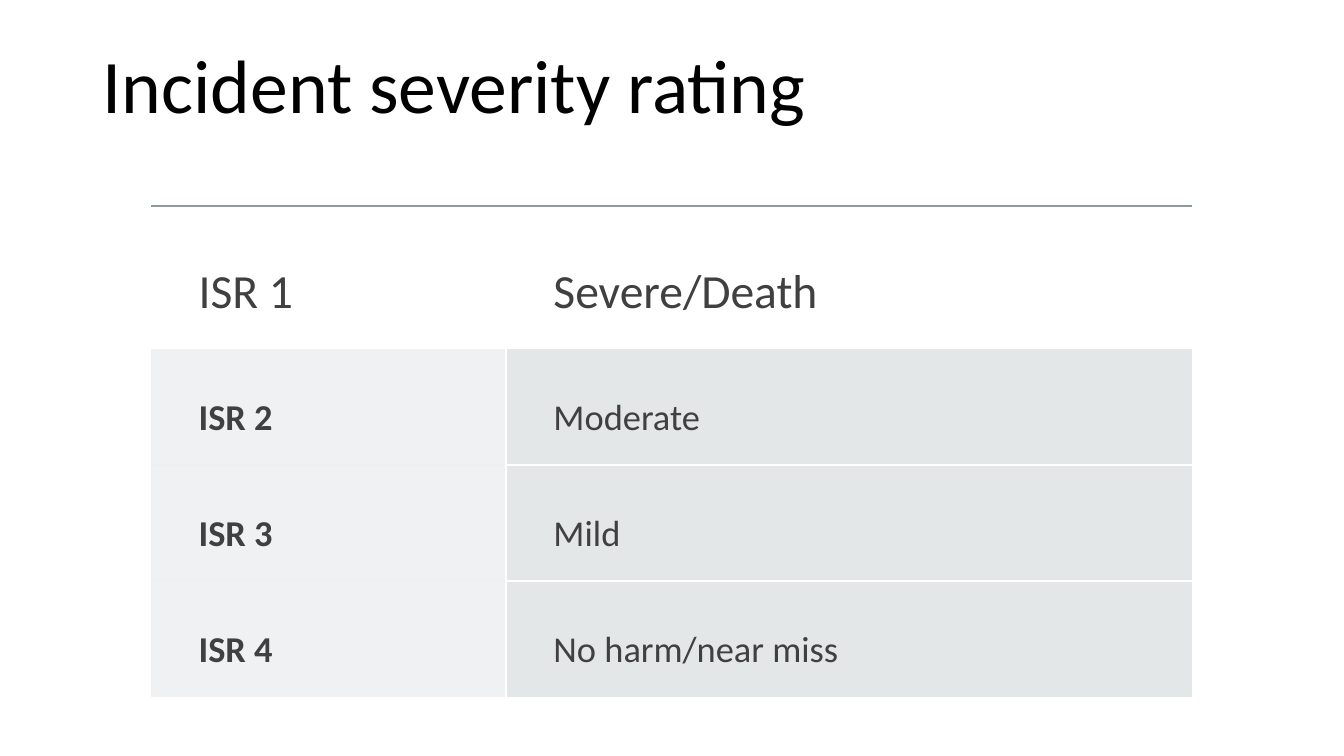
from lxml import etree
from pptx import Presentation
from pptx.dml.color import RGBColor
from pptx.enum.text import MSO_ANCHOR, PP_ALIGN
from pptx.oxml.ns import qn
from pptx.util import Inches, Pt

TOP, BOTTOM = MSO_ANCHOR.TOP, MSO_ANCHOR.BOTTOM
LEFT = PP_ALIGN.LEFT
TITLE_ONLY = 5

TITLE = "Incident severity rating"
RATINGS = [
    ("ISR 1", "Severe/Death"),
    ("ISR 2", "Moderate"),
    ("ISR 3", "Mild"),
    ("ISR 4", "No harm/near miss"),
]
COLUMN_WIDTHS = (3.52, 6.81)
ROW_HEIGHTS = (1.4, 1.15, 1.15, 1.15)
COLUMN_OPACITY = (20, 35)
CELL_FILL = "B4BCBE"
WHITE_LINE = ("FFFFFF", 100)
TOP_RULE = ("8F9A9D", 60)


def color(value):
    return RGBColor.from_string(value)


def set_format(target, values):
    for name, value in values.items():
        setattr(target, name, value)


def write_text(frame, text, line_spacing, size, ink, bold=False):
    para = frame.paragraphs[0]
    set_format(para, {"line_spacing": line_spacing, "alignment": LEFT})
    span = para.add_run()
    span.text = text
    set_format(span.font, {"name": "Calibri", "size": Pt(size), "bold": bold})
    span.font.color.rgb = color(ink)


def add_alpha(color_element, percent):
    etree.SubElement(color_element, qn("a:alpha"), val=str(percent * 1000))


def set_borders(cell, borders):
    """Draw the given sides and switch the others off, ahead of the cell fill."""
    properties = cell._tc.get_or_add_tcPr()
    for index, side in enumerate("LRTB"):
        line = etree.Element(qn(f"a:ln{side}"), w=str(Pt(1.5)))
        properties.insert(index, line)
        if side not in borders:
            etree.SubElement(line, qn("a:noFill"))
            continue
        value, opacity = borders[side]
        solid = etree.SubElement(line, qn("a:solidFill"))
        add_alpha(etree.SubElement(solid, qn("a:srgbClr"), val=value), opacity)


def borders_of(row, column):
    borders = {"R": WHITE_LINE}
    if row == 0:
        borders["T"] = TOP_RULE
    elif column == 1:
        borders["L"] = WHITE_LINE
        if row > 1:
            borders["T"] = WHITE_LINE
        if row < len(RATINGS) - 1:
            borders["B"] = WHITE_LINE
    return borders


def format_cell(cell, row, column, text):
    first = row == 0
    margin = Inches(0.28 if first else 0.24)
    set_format(cell, {
        "margin_left": Inches(0.47), "margin_top": margin,
        "margin_right": margin, "margin_bottom": margin,
        "vertical_anchor": TOP,
    })
    write_text(cell.text_frame, text, 1.5, 34 if first else 26, "404040",
               bold=not first and column == 0)
    if first:
        cell.fill.background()
    else:
        cell.fill.solid()
        cell.fill.fore_color.rgb = color(CELL_FILL)
        shade = cell._tc.tcPr.find(qn("a:solidFill")).find(qn("a:srgbClr"))
        add_alpha(shade, COLUMN_OPACITY[column])
    set_borders(cell, borders_of(row, column))


def add_ratings(slide):
    table = slide.shapes.add_table(
        len(RATINGS), len(COLUMN_WIDTHS), Inches(1.5), Inches(2.04),
        Inches(sum(COLUMN_WIDTHS)), Inches(sum(ROW_HEIGHTS))).table
    set_format(table, {"first_row": False, "horz_banding": False})
    for column, width in zip(table.columns, COLUMN_WIDTHS):
        column.width = Inches(width)
    for row, height in zip(table.rows, ROW_HEIGHTS):
        row.height = Inches(height)
    for row, texts in enumerate(RATINGS):
        for column, text in enumerate(texts):
            format_cell(table.cell(row, column), row, column, text)


def main():
    deck = Presentation()
    deck.slide_width, deck.slide_height = Inches(13.33), Inches(7.5)
    slide = deck.slides.add_slide(deck.slide_layouts[TITLE_ONLY])
    title = slide.shapes.title
    set_format(title, {"left": Inches(0.92), "top": Inches(0.32),
                       "width": Inches(11.5), "height": Inches(1.02)})
    title.text_frame.vertical_anchor = BOTTOM
    write_text(title.text_frame, TITLE, 0.9, 54, "000000")
    add_ratings(slide)
    deck.save("out.pptx")


if __name__ == "__main__":
    main()
